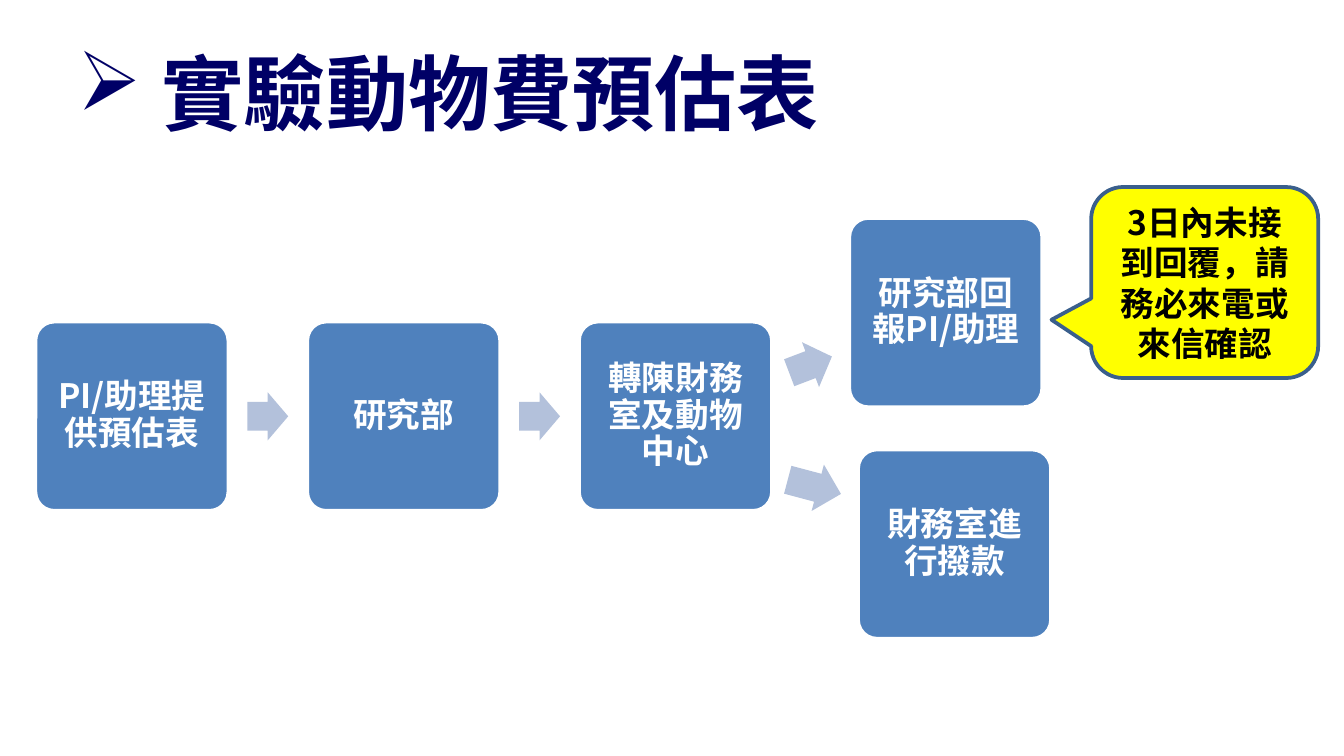
from lxml import etree
from pptx import Presentation
from pptx.dml.color import RGBColor
from pptx.enum.shapes import MSO_SHAPE as SHAPE
from pptx.enum.text import MSO_ANCHOR as ANCHOR, PP_ALIGN as ALIGN
from pptx.oxml.ns import qn
from pptx.util import Pt

COLORS = {"navy": "000066", "blue": "4F81BD", "pale": "B3C1DB", "white": "FFFFFF",
          "yellow": "FFFF00", "edge": "3A5F8C", "black": "000000"}
CJK = "Noto Sans CJK SC"


def add_shape(kind, x, y, w, h, adjustments, fill, line=None):
    sp = s.shapes.add_shape(kind, Pt(x), Pt(y), Pt(w), Pt(h))
    sp.shadow.inherit = False
    for i, value in enumerate(adjustments):
        sp.adjustments[i] = value
    sp.fill.solid()
    sp.fill.fore_color.rgb = RGBColor.from_string(COLORS[fill])
    if line:
        sp.line.color.rgb = RGBColor.from_string(COLORS[line])
        sp.line.width = Pt(2)
    else:
        sp.line.fill.background()
    return sp


def set_text(sp, text, size, color, align, latin=CJK):
    tf = sp.text_frame
    tf.word_wrap = True
    tf.vertical_anchor = ANCHOR.MIDDLE
    p = tf.paragraphs[0]
    p.text = text
    p.alignment = align
    p.font.size = Pt(size)
    p.font.bold = True
    p.font.color.rgb = RGBColor.from_string(COLORS[color])
    p.font.name = latin
    props = p._p.get_or_add_pPr().find(qn("a:defRPr"))
    etree.SubElement(props, qn("a:ea")).set("typeface", CJK)
    return p


prs = Presentation()
prs.slide_width, prs.slide_height = Pt(720), Pt(405)
s = prs.slides.add_slide(prs.slide_layouts[5])

title = s.shapes.title
title.left, title.top, title.width, title.height = Pt(34.5), Pt(15), Pt(648), Pt(68)
p = set_text(title, "實驗動物費預估表", 44, "navy", ALIGN.LEFT, "Times New Roman")
pPr = p._p.get_or_add_pPr()
pPr.set("marL", str(Pt(45)))
pPr.set("indent", str(Pt(-45)))
bullet = etree.Element(qn("a:buChar"))
bullet.set("char", "➢")
pPr.find(qn("a:defRPr")).addprevious(bullet)

STEP_X, STEP_Y, PITCH = 19, 172.3, 145.6
steps = [
    ("PI/助理提供預估表", STEP_X, STEP_Y),
    ("研究部", STEP_X + PITCH, STEP_Y),
    ("轉陳財務室及動物中心", STEP_X + 2 * PITCH, STEP_Y),
    ("研究部回報PI/助理", 455, 116.8),
    ("財務室進行撥款", 459.7, 240.8),
]
for text, x, y in steps:
    sp = add_shape(SHAPE.ROUNDED_RECTANGLE, x, y, 103.4, 101.4, [0.1], "blue", "white")
    tf = sp.text_frame
    tf.margin_left = tf.margin_right = tf.margin_top = tf.margin_bottom = Pt(5.4)
    p = set_text(sp, text, 18, "white", ALIGN.CENTER)
    p.line_spacing = 0.9

arrows = [
    (132.5, 210.2, 21.9, 0),
    (132.5 + PITCH, 210.2, 21.9, 0),
    (422, 182.5, 24.5, 339.2),
    (421.5, 248, 29.5, 14.9),
]
for x, y, w, angle in arrows:
    sp = add_shape(SHAPE.RIGHT_ARROW, x, y, w, 25.7, [0.6, 0.5], "pale")
    sp.rotation = angle

callout = add_shape(SHAPE.ROUNDED_RECTANGULAR_CALLOUT, 584.6, 100.2, 121.6, 102.3,
                    [-0.675, 0.195, 0.167], "yellow", "edge")
set_text(callout, "3日內未接到回覆，請務必來電或來信確認", 18, "black", ALIGN.CENTER)

prs.save("out.pptx")
